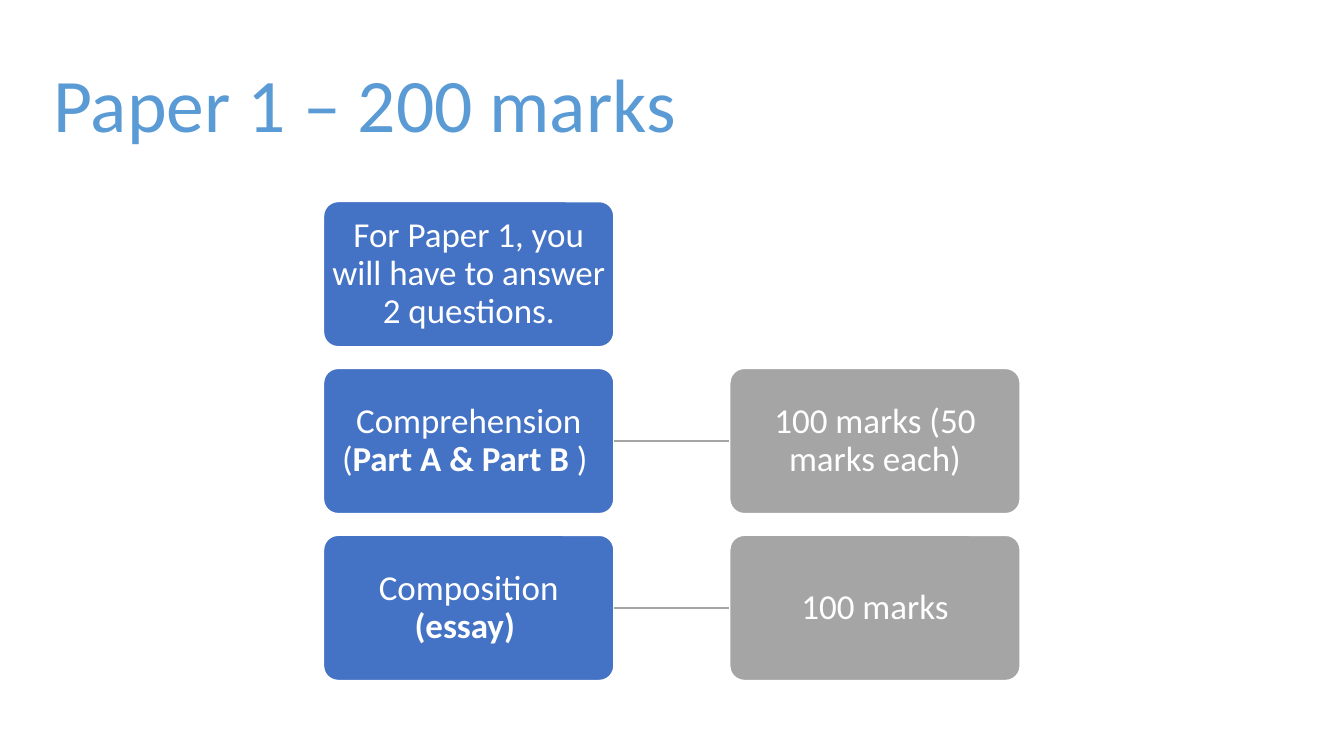
from dataclasses import dataclass

from lxml import etree
from pptx import Presentation
from pptx.dml.color import RGBColor
from pptx.enum.shapes import MSO_CONNECTOR, MSO_SHAPE
from pptx.enum.text import MSO_ANCHOR, MSO_AUTO_SIZE, PP_ALIGN
from pptx.oxml.ns import qn
from pptx.slide import Slide
from pptx.text.text import TextFrame
from pptx.util import Pt

ROUNDED = MSO_SHAPE.ROUNDED_RECTANGLE
STRAIGHT = MSO_CONNECTOR.STRAIGHT
MIDDLE = MSO_ANCHOR.MIDDLE
NO_AUTOFIT = MSO_AUTO_SIZE.NONE
LEFT, CENTER = PP_ALIGN.LEFT, PP_ALIGN.CENTER

WHITE = RGBColor(0xFF, 0xFF, 0xFF)
TITLE_BLUE = RGBColor(0x5B, 0x9B, 0xD5)
QUESTION_BLUE = RGBColor(0x44, 0x72, 0xC4)
MARKS_GREY = RGBColor(0xA5, 0xA5, 0xA5)

FONT = "Calibri"
TILE_WIDTH, TILE_HEIGHT = 207.36, 103.68
QUESTION_LEFT, MARKS_LEFT = 231.12, 521.28
FIRST_TOP, ROW_PITCH = 144, 119.2
TILE_INSET = 1.4


@dataclass(frozen=True)
class Span:
    text: str
    bold: bool = False


@dataclass(frozen=True)
class Row:
    question: tuple[Span, ...]
    marks: str = ""


ROWS = (
    Row((Span("For Paper 1, you will have to answer 2 questions."),)),
    Row((Span("Comprehension ("), Span("Part A & Part B ", True), Span(") ")),
        "100 marks (50 marks each)"),
    Row((Span("Composition "), Span("(essay) ", True)), "100 marks"),
)


def write_spans(frame: TextFrame, spans: tuple[Span, ...], size: float,
                color: RGBColor, align: PP_ALIGN) -> None:
    frame_format = {"word_wrap": True, "auto_size": NO_AUTOFIT,
                    "vertical_anchor": MIDDLE}
    for name, value in frame_format.items():
        setattr(frame, name, value)
    paragraph = frame.paragraphs[0]
    paragraph.alignment = align
    paragraph.line_spacing = 0.9
    for span in spans:
        run = paragraph.add_run()
        run.text = span.text
        font_format = {"name": FONT, "size": Pt(size), "bold": span.bold}
        for name, value in font_format.items():
            setattr(run.font, name, value)
        run.font.color.rgb = color


def add_title(slide: Slide, text: str) -> None:
    title = slide.shapes.title
    place = {"left": 30.96, "top": 25.2, "width": 898.56, "height": 104.4}
    for name, value in place.items():
        setattr(title, name, Pt(value))
    write_spans(title.text_frame, (Span(text),), 54, TITLE_BLUE, LEFT)


def add_tile(slide: Slide, left: float, top: float,
             spans: tuple[Span, ...], fill: RGBColor) -> None:
    tile = slide.shapes.add_shape(ROUNDED, Pt(left), Pt(top),
                                  Pt(TILE_WIDTH), Pt(TILE_HEIGHT))
    tile.shadow.inherit = False
    tile.adjustments[0] = 0.1
    tile.fill.solid()
    tile.fill.fore_color.rgb = fill
    tile.line.color.rgb = WHITE
    tile.line.width = Pt(1)
    for side in ("left", "top", "right", "bottom"):
        setattr(tile.text_frame, f"margin_{side}", Pt(TILE_INSET))
    write_spans(tile.text_frame, spans, 25, WHITE, CENTER)


def add_link(slide: Slide, y: float) -> None:
    """Join a question tile to its marks tile at height y."""
    link = slide.shapes.add_connector(
        STRAIGHT, Pt(QUESTION_LEFT + TILE_WIDTH), Pt(y), Pt(MARKS_LEFT), Pt(y))
    link.line.color.rgb = MARKS_GREY
    link.line.width = Pt(1)
    etree.SubElement(link._element.spPr, qn("a:effectLst"))


def main() -> None:
    deck = Presentation()
    deck.slide_width, deck.slide_height = Pt(960), Pt(540)
    slide = deck.slides.add_slide(deck.slide_layouts.get_by_name("Title Only"))
    add_title(slide, "Paper 1 – 200 marks")
    for index, row in enumerate(ROWS):
        top = FIRST_TOP + index * ROW_PITCH
        add_tile(slide, QUESTION_LEFT, top, row.question, QUESTION_BLUE)
        if row.marks:
            add_link(slide, top + TILE_HEIGHT / 2)
            add_tile(slide, MARKS_LEFT, top, (Span(row.marks),), MARKS_GREY)
    deck.save("out.pptx")


if __name__ == "__main__":
    main()
